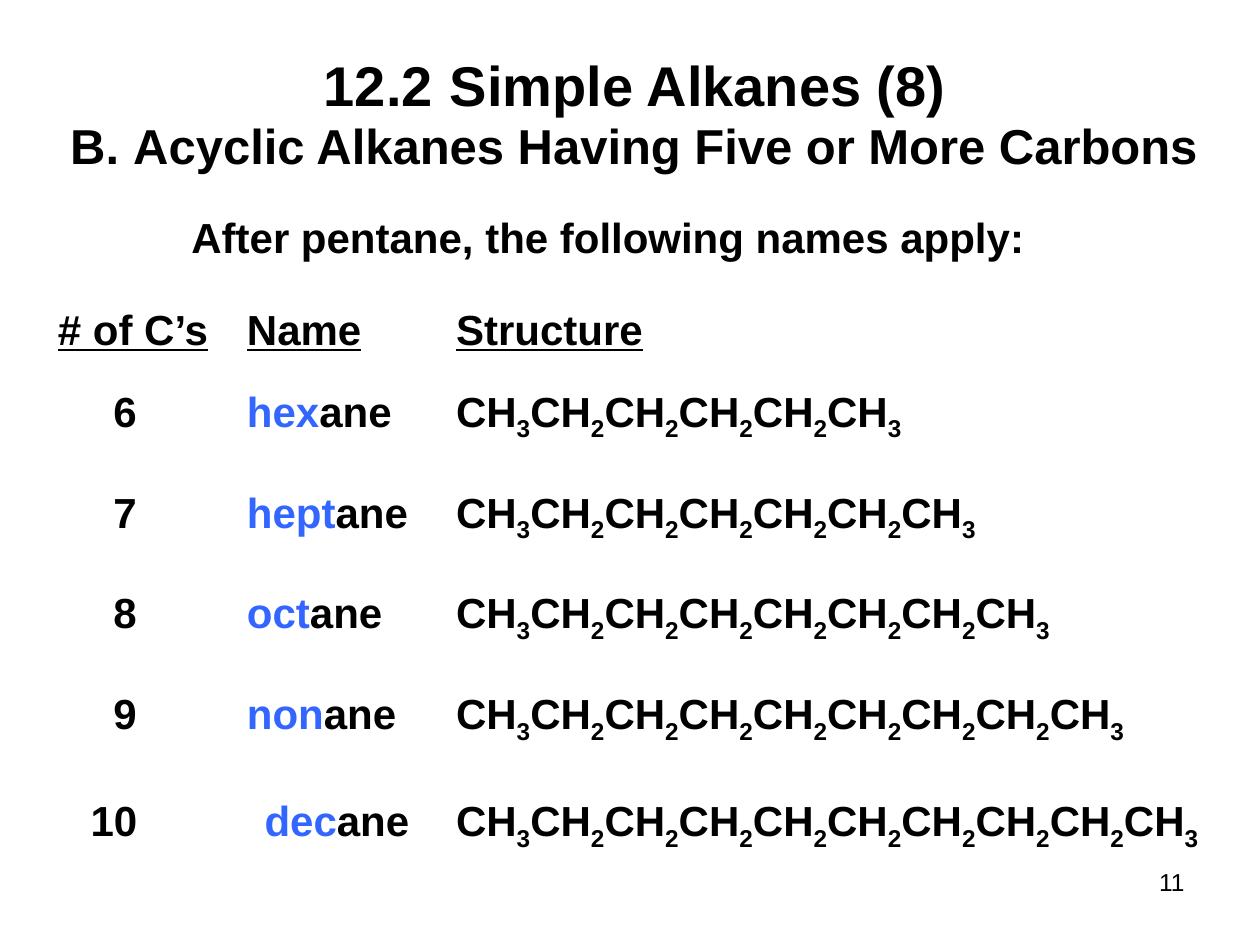
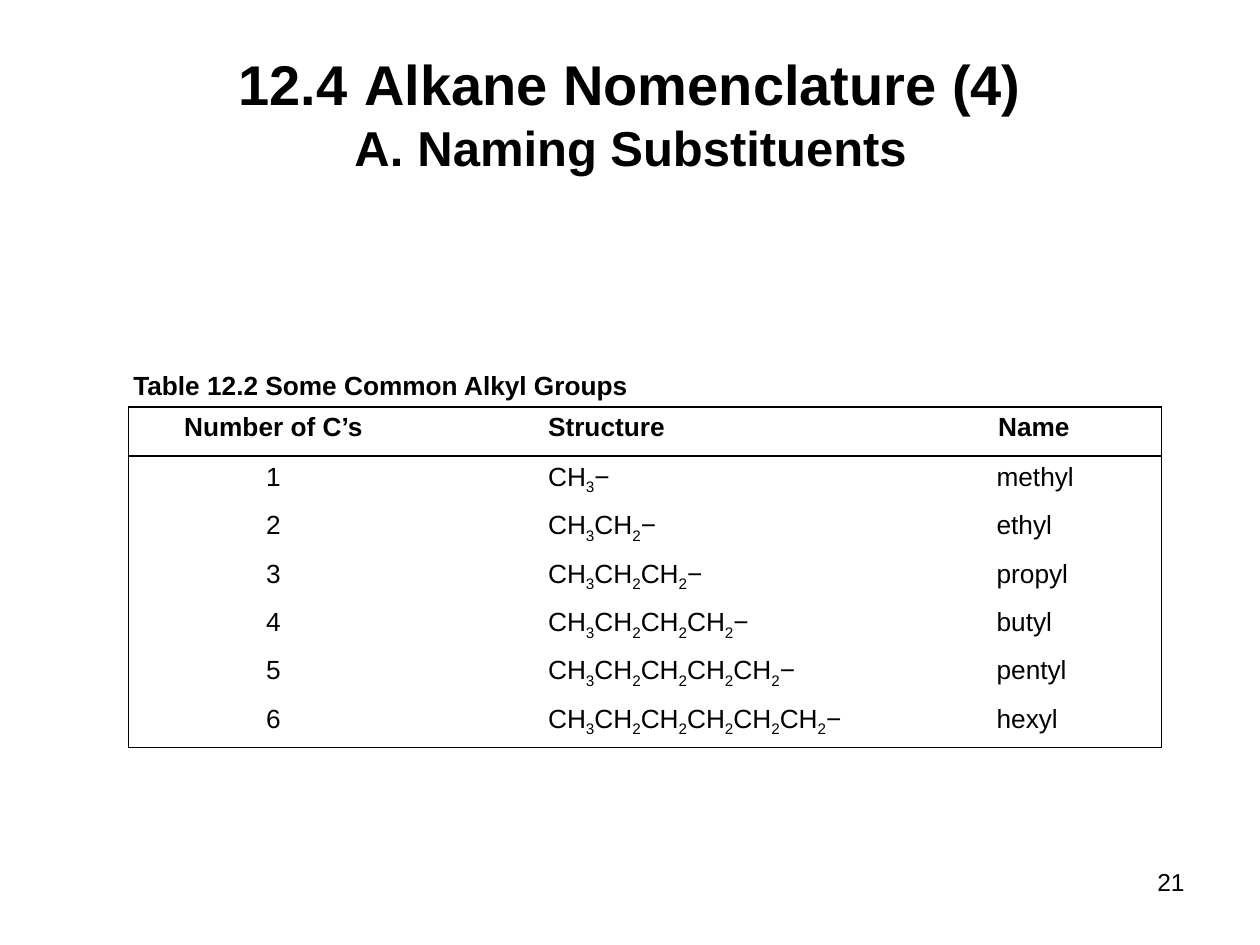
import pptx
import pptx.chart.data
import pptx.dml.color
import pptx.enum.text
import pptx.oxml
import pptx.oxml.ns
import pptx.util

Inches = pptx.util.Inches
Pt = pptx.util.Pt
Align = pptx.enum.text.PP_ALIGN
Anchor = pptx.enum.text.MSO_ANCHOR

FONT, BLACK, BLUE = "Arial", "000000", "3366FF"
PAD = 0.1

# Heads: text, box (left, top, width, height)
ALKANES = {
    "title": ("12.2\tSimple Alkanes (8)", (2.29, 0.38, 5.5, 0.58)),
    "part": ("Acyclic Alkanes Having Five or More Carbons",
             (0.07, 0.87, 9.92, 0.61), 2),
    "note": ("After pentane, the following names apply:",
             (1.42, 1.63, 6.92, 0.62), 24),
    "page": "11",
}
GROUPS = {
    "title": ("12.4\tAlkane Nomenclature (4)", (1.73, 0.3, 6.54, 0.72)),
    "part": ("Naming Substituents", (2.61, 0.88, 4.79, 0.71), 1),
    "note": ("Table 12.2 Some Common Alkyl Groups",
             (0.96, 2.88, 4.51, 0.34), 15),
    "page": "21",
}
PAGE_BOX = (7.61, 6.83, 1.89, 0.34)

CHAIN_HEAD = ("# of C’s", "Name", "Structure")
CHAINS = [(6, "hex"), (7, "hept"), (8, "oct"), (9, "non"), (10, "dec")]
CHAIN_GRID = ((0.36, 2.39), (1.5, 1.66, 6.28), (0.65, 0.8, 0.8, 0.8, 0.85, 0.8))

GROUP_HEAD = ("Number of C’s", "Structure", "Name")
ALKYLS = ["methyl", "ethyl", "propyl", "butyl", "pentyl", "hexyl"]
GROUP_GRID = ((1.02, 3.23), (2.3, 3.87, 2.03), (0.39,) + (0.36,) * 5 + (0.39,))


def color(code):
    return pptx.dml.color.RGBColor.from_string(code)


def formula(mids, end):
    """Runs for CH3, then so many CH2 units, then the end."""
    runs = [("CH", ""), ("3", "sub")]
    runs += [("CH", ""), ("2", "sub")] * mids
    return runs + end


def write(para, runs, size, bold=True, align=Align.LEFT):
    para.alignment = align
    for text, look in runs:
        run = para.add_run()
        run.text = text
        font = run.font
        font.name, font.size, font.bold = FONT, Pt(size), bold
        font.color.rgb = color(BLUE if look == "blue" else BLACK)
        font.underline = look == "line"
        if look == "sub":
            run._r.get_or_add_rPr().set("baseline", "-25000")


def add_text(slide, text, box, size, bold=True, align=Align.LEFT,
             anchor=Anchor.TOP):
    frame = slide.shapes.add_textbox(*map(Inches, box)).text_frame
    frame.word_wrap = True
    frame.vertical_anchor = anchor
    write(frame.paragraphs[0], [(text, "")], size, bold, align)
    return frame.paragraphs[0]


def letter(para, start):
    """Number the paragraph with a capital letter."""
    props = para._p.get_or_add_pPr()
    props.set("marL", str(Inches(0.5)))
    props.set("indent", str(-Inches(0.5)))
    mark = pptx.oxml.parse_xml(
        f'<a:buAutoNum {pptx.oxml.ns.nsdecls("a")} '
        f'type="alphaUcPeriod" startAt="{start}"/>')
    props.append(mark)


def add_page(deck, data):
    slide = deck.slides.add_slide(deck.slide_layouts[6])
    add_text(slide, data["page"], PAGE_BOX, 14, False, Align.RIGHT)
    title, box = data["title"]
    add_text(slide, title, box, 32, align=Align.CENTER, anchor=Anchor.MIDDLE)
    part, box, start = data["part"]
    letter(add_text(slide, part, box, 28, align=Align.CENTER), start)
    add_text(slide, *data["note"])
    return slide


def edge(cell, sides):
    """Draw the named sides in black and clear the others."""
    props = cell._tc.get_or_add_tcPr()
    for side in "LRTB":
        paint = (f'<a:solidFill><a:srgbClr val="{BLACK}"/></a:solidFill>'
                 if side in sides else "<a:noFill/>")
        props.append(pptx.oxml.parse_xml(
            f'<a:ln{side} {pptx.oxml.ns.nsdecls("a")} w="{Pt(1)}">'
            f'{paint}</a:ln{side}>'))
    cell.fill.background()


def add_grid(slide, grid, rows, size, frame):
    """Fill a table; each cell is (runs, indent, align, bold)."""
    spot, wides, highs = grid
    table = slide.shapes.add_table(
        len(highs), len(wides), *map(Inches, spot),
        Inches(sum(wides)), Inches(sum(highs))).table
    table.first_row = table.horz_banding = False
    for col, wide in zip(table.columns, wides):
        col.width = Inches(wide)
    for row, high in zip(table.rows, highs):
        row.height = Inches(high)
    last, end = len(highs) - 1, len(wides) - 1
    for r, row in enumerate(rows):
        for c, (runs, indent, align, bold) in enumerate(row):
            cell = table.cell(r, c)
            cell.margin_left = Inches(PAD + indent)
            write(cell.text_frame.paragraphs[0], runs, size, bold, align)
            rules = {"L": c == 0, "R": c == end, "T": r in (0, 1),
                     "B": r in (0, last)}
            edge(cell, [s for s in rules if frame and rules[s]])


def chain_rows():
    rows = [[([(head, "line")], 0, Align.LEFT, True) for head in CHAIN_HEAD]]
    for count, stem in CHAINS:
        wide = count > 9
        rows.append([
            ([(str(count), "")], 0.26 if wide else 0.44, Align.LEFT, True),
            ([(stem, "blue"), ("ane", "")], 0.14 if wide else 0,
             Align.LEFT, True),
            (formula(count - 2, [("CH", ""), ("3", "sub")]), 0,
             Align.LEFT, True)])
    return rows


def group_rows():
    mid, left = Align.CENTER, Align.LEFT
    rows = [[([(head, "")], inset, align, True) for head, inset, align
             in zip(GROUP_HEAD, (0, 0.93, 0), (mid, left, mid))]]
    for count, name in enumerate(ALKYLS, 1):
        rows.append([
            ([(str(count), "")], 0, mid, False),
            (formula(count - 1, [("−", "")]), 0.93, left, False),
            ([(name, "")], 0.62, left, False)])
    return rows


def main():
    deck = pptx.Presentation()
    deck.slide_width, deck.slide_height = Inches(10), Inches(7.5)
    add_grid(add_page(deck, ALKANES), CHAIN_GRID, chain_rows(), 24, False)
    add_grid(add_page(deck, GROUPS), GROUP_GRID, group_rows(), 15, True)
    deck.save("out.pptx")


if __name__ == "__main__":
    main()
